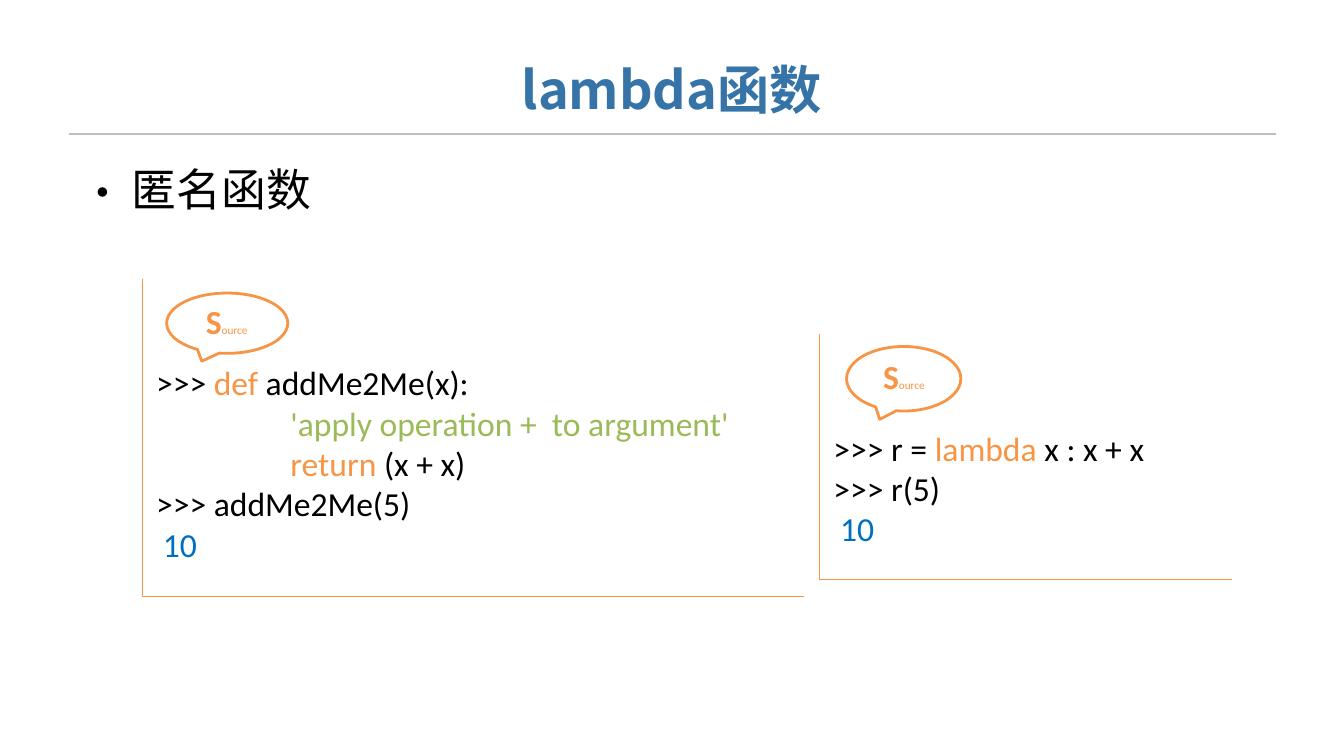
from dataclasses import dataclass

from lxml.etree import SubElement
from pptx import Presentation
from pptx.dml.color import RGBColor
from pptx.enum.shapes import MSO_CONNECTOR, MSO_SHAPE
from pptx.enum.text import MSO_ANCHOR, MSO_AUTO_SIZE, PP_ALIGN
from pptx.oxml.ns import qn
from pptx.util import Cm, Pt


@dataclass(frozen=True)
class Theme:
    heading_font: str = "Noto Sans CJK SC"
    code_font: str = "Calibri"
    heading: RGBColor = RGBColor(0x36, 0x74, 0xA8)
    ink: RGBColor = RGBColor(0, 0, 0)
    accent: RGBColor = RGBColor(0xF7, 0x95, 0x46)
    string: RGBColor = RGBColor(0x9B, 0xBA, 0x58)
    result: RGBColor = RGBColor(0x00, 0x6F, 0xC0)
    rule: RGBColor = RGBColor(0xBE, 0xBE, 0xBE)
    title_size: Pt = Pt(28)
    body_size: Pt = Pt(24)
    code_size: Pt = Pt(18)
    label_size: Pt = Pt(6)
    code_pitch: Pt = Pt(21.6)


THEME = Theme()


@dataclass(frozen=True)
class Line:
    segments: tuple
    indent: float = 0.03
    before: float = 0


SOURCE = (("S", THEME.accent, THEME.code_size, True),
          ("ource", THEME.accent, THEME.label_size, False))


def code(text, color=THEME.ink):
    return text, color, THEME.code_size, False


def place(shape, left, top, width, height):
    shape.left, shape.top = Cm(left), Cm(top)
    shape.width, shape.height = Cm(width), Cm(height)


def prepare_frame(frame):
    frame.margin_left = frame.margin_right = 0
    frame.margin_top = frame.margin_bottom = 0
    frame.word_wrap = True
    frame.auto_size = MSO_AUTO_SIZE.NONE
    frame.vertical_anchor = MSO_ANCHOR.TOP


def set_indent(paragraph, margin, first=0):
    properties = paragraph._p.get_or_add_pPr()
    properties.set("marL", str(Cm(margin)))
    properties.set("indent", str(Cm(first)))
    return properties


def fill_placeholder(placeholder, text, box, size, color, bold, margin, bullet=None):
    place(placeholder, *box)
    prepare_frame(placeholder.text_frame)
    placeholder.text_frame.text = text
    paragraph = placeholder.text_frame.paragraphs[0]
    paragraph.alignment = PP_ALIGN.LEFT
    paragraph.line_spacing = 0.9
    paragraph.space_before = Pt(0)
    properties = set_indent(paragraph, margin, 0.03 - margin if bullet else 0)
    if bullet:
        SubElement(properties, qn("a:buFont"), typeface=THEME.heading_font)
        SubElement(properties, qn("a:buChar"), char=bullet)
    font = paragraph.font
    font.size, font.bold, font.name = size, bold, THEME.heading_font
    font.color.rgb = color
    SubElement(font._element, qn("a:ea"), typeface=THEME.heading_font)


def add_rule(slide, left, right, y):
    rule = slide.shapes.add_connector(
        MSO_CONNECTOR.STRAIGHT, Cm(left), Cm(y), Cm(right), Cm(y))
    rule.line.color.rgb = THEME.rule
    rule.line.width = Pt(1)
    SubElement(rule._element.spPr, qn("a:effectLst"))


def outline(shape, width):
    shape.shadow.inherit = False
    shape.fill.background()
    shape.line.color.rgb = THEME.accent
    shape.line.width = Pt(width)


def add_bracket(slide, left, top, right, bottom):
    builder = slide.shapes.build_freeform(Cm(left), Cm(top))
    builder.add_line_segments(
        [(Cm(left), Cm(bottom)), (Cm(right), Cm(bottom))], close=False)
    outline(builder.convert_to_shape(), 0.75)


def add_callout(slide, left, top, width, height):
    callout = slide.shapes.add_shape(
        MSO_SHAPE.OVAL_CALLOUT, Cm(left), Cm(top), Cm(width), Cm(height))
    callout.adjustments[0] = -0.21
    callout.adjustments[1] = 0.63
    outline(callout, 1.5)


def add_code(slide, box, lines):
    frame = slide.shapes.add_textbox(*map(Cm, box)).text_frame
    prepare_frame(frame)
    for number, line in enumerate(lines):
        paragraph = frame.add_paragraph() if number else frame.paragraphs[0]
        set_indent(paragraph, line.indent)
        paragraph.line_spacing = THEME.code_pitch
        if line.before:
            paragraph.space_before = Pt(line.before)
        paragraph.font.name = THEME.code_font
        for text, color, size, bold in line.segments:
            run = paragraph.add_run()
            run.text = text
            run.font.size, run.font.bold = size, bold
            run.font.color.rgb = color


def main():
    deck = Presentation()
    deck.slide_width, deck.slide_height = Cm(25.4), Cm(14.29)
    slide = deck.slides.add_slide(deck.slide_layouts[1])

    add_rule(slide, 1.3, 24.11, 2.54)
    fill_placeholder(slide.shapes.title, "lambda函数", (4.27, 1.22, 16.87, 1.22),
                     THEME.title_size, THEME.heading, True, 5.59)
    fill_placeholder(slide.placeholders[1], "匿名函数", (1.5, 3.18, 4.42, 1.04),
                     THEME.body_size, THEME.ink, False, 0.99, "•")

    result = Line((code("10", THEME.result),), 0.16)

    add_bracket(slide, 15.49, 6.32, 23.29, 10.95)
    add_code(slide, (15.72, 8.08, 5.97, 2.36), [
        Line((code(">>> r = "), code("lambda ", THEME.accent), code("x : x + x"))),
        Line((code(">>> r(5)"),)),
        result,
    ])
    add_callout(slide, 16, 6.55, 2.16, 1.22)
    add_code(slide, (16.66, 6.73, 0.86, 0.84), [Line(SOURCE)])

    add_bracket(slide, 2.69, 5.28, 15.19, 11.28)
    add_callout(slide, 3.15, 5.54, 2.29, 1.14)
    add_code(slide, (2.92, 5.69, 10.92, 5.03), [
        Line(SOURCE, 0.97),
        Line((code(">>> "), code("def ", THEME.accent), code("addMe2Me(x):")),
             before=11.2),
        Line((code("'apply operation +  to argument'", THEME.string),), 2.57),
        Line((code("return ", THEME.accent), code("(x + x)")), 2.57),
        Line((code(">>> addMe2Me(5)"),)),
        result,
    ])

    deck.save("out.pptx")


if __name__ == "__main__":
    main()
